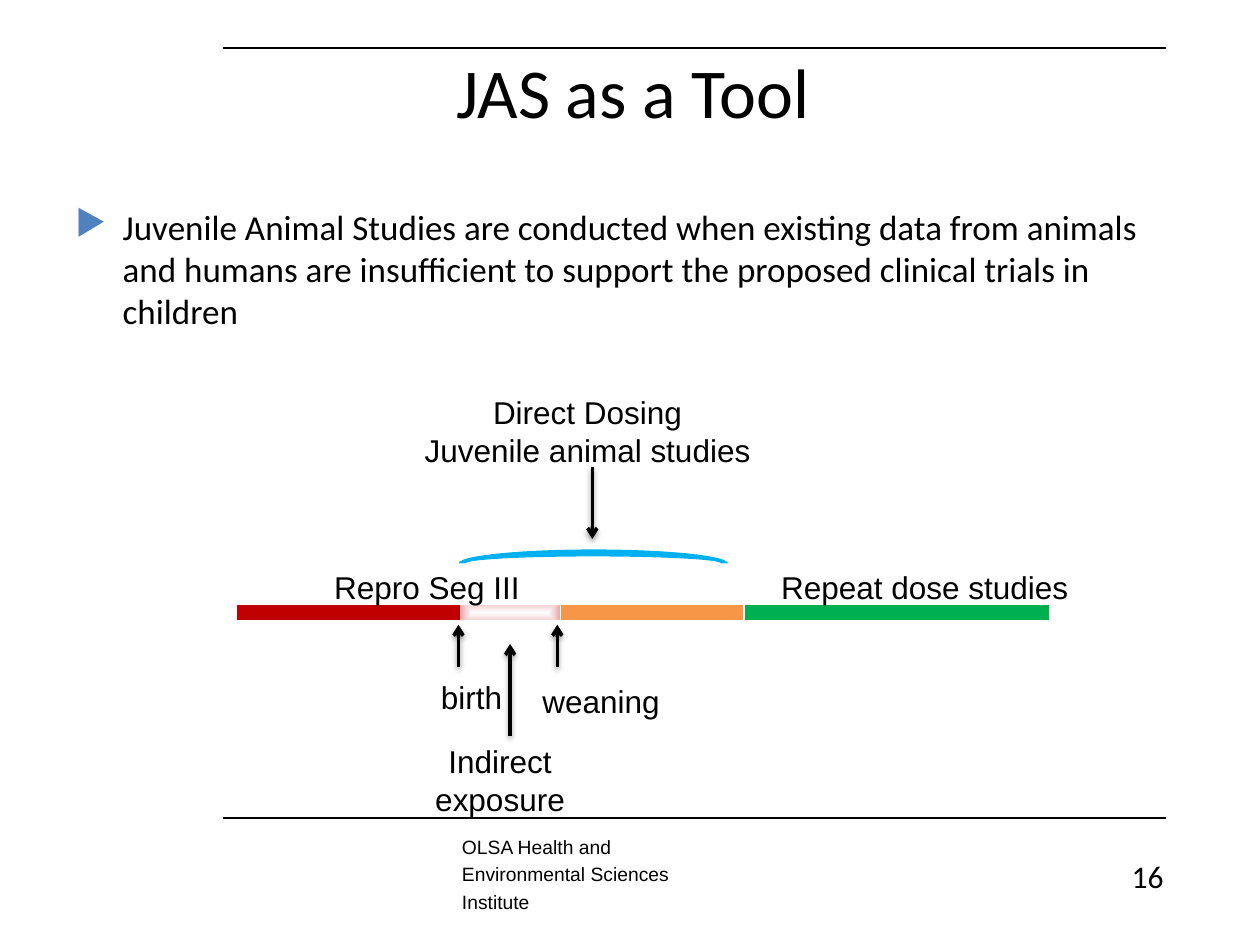
from pptx import Presentation
from pptx.dml.color import RGBColor
from pptx.enum.shapes import MSO_CONNECTOR, MSO_SHAPE
from pptx.enum.text import MSO_ANCHOR, PP_ALIGN
from pptx.oxml import parse_xml
from pptx.oxml.ns import nsdecls
from pptx.util import Pt

# Content
TITLE = "JAS as a Tool"
BODY = ("Juvenile Animal Studies are conducted when existing data from animals and humans "
        "are insufficient to support the proposed clinical trials in children")
FOOTER = "OLSA Health and Environmental Sciences Institute"
PAGE = "16"

# Timeline phases: visible left, visible right, colour name
PHASES = [
    (263.5, 319.5, "exposure"),
    (135.5, 263, "repro"),
    (320.5, 424.5, "juvenile"),
    (426, 599.5, "repeat"),
]
# Labels: paragraphs, (left, top, width, height), alignment
LABELS = [
    (["Repro Seg III"], (182, 321, 122, 29), "r"),
    (["birth"], (231, 384, 63, 29), "r"),
    (["weaning"], (291.5, 386, 92.5, 29), "r"),
    (["Indirect exposure"], (236, 420.5, 99.5, 51), "c"),
    (["Direct Dosing", "Juvenile animal studies"], (218, 221, 235.5, 51), "c"),
    (["Repeat dose studies"], (426, 321, 191.5, 29), "r"),
]
# Arrows: x, start y, tip y
ARROWS = [(318.5, 381, 357), (262, 381, 357), (291.5, 420.5, 368), (338.5, 267, 308)]
RULES_Y = [27.5, 467.5]

THEME = {
    "text": "000000", "paper": "FFFFFF", "bullet": "4F81BD", "arc": "00B0F0",
    "repro": "C00000", "juvenile": "F79646", "repeat": "00B050", "edge": "800080",
    "head": "Calibri", "label": "Arial",
    "title": 40, "body": 20, "note": 18, "footer": 11,
}
ALIGN = {"l": PP_ALIGN.LEFT, "c": PP_ALIGN.CENTER, "r": PP_ALIGN.RIGHT}
BAR_CENTRE, BAR_BOX_HEIGHT = 350, 34.5
MINUS_SPAN = 0.735  # share of a minus shape's width that is drawn


def color(name):
    return RGBColor.from_string(THEME[name])


def write(sp, lines, font="label", size="note", align="l", spacing=None, inset=None, bullet=None):
    tf = sp.text_frame
    tf.word_wrap = True
    tf.vertical_anchor = MSO_ANCHOR.TOP
    if inset is not None:
        tf.margin_left = tf.margin_right = tf.margin_top = tf.margin_bottom = Pt(inset)
    for i, line in enumerate(lines):
        p = tf.add_paragraph() if i else tf.paragraphs[0]
        p.alignment = ALIGN[align]
        if spacing:
            p.line_spacing = spacing
        if bullet:
            pPr = p._p.get_or_add_pPr()
            pPr.set("marL", str(Pt(27)))
            pPr.set("indent", str(-Pt(27)))
            pPr.append(parse_xml(f'<a:buClr {nsdecls("a")}><a:srgbClr val="{THEME["bullet"]}"/></a:buClr>'))
            pPr.append(parse_xml(f'<a:buChar {nsdecls("a")} char="{bullet}"/>'))
        r = p.add_run()
        r.text = line
        r.font.name, r.font.size = THEME[font], Pt(THEME[size])
        r.font.color.rgb = color("text")


def add_text(s, lines, box, **fmt):
    sp = s.shapes.add_textbox(*map(Pt, box))
    write(sp, lines, **fmt)
    return sp


def add_shape(s, kind, box, fill):
    sp = s.shapes.add_shape(kind, *map(Pt, box))
    sp.shadow.inherit = False
    sp.line.fill.background()
    sp.fill.solid()
    sp.fill.fore_color.rgb = color(fill)
    return sp


def add_line(s, x1, y1, x2, y2, width, arrow=False):
    c = s.shapes.add_connector(MSO_CONNECTOR.STRAIGHT, Pt(x1), Pt(y1), Pt(x2), Pt(y2))
    c.line.width = Pt(width)
    c.line.color.rgb = color("text")
    shadow = ""
    if arrow:
        c.line._get_or_add_ln().append(parse_xml(f'<a:tailEnd {nsdecls("a")} type="arrow"/>'))
        shadow = (f'<a:outerShdw blurRad="{Pt(3.1)}" dist="{Pt(1.6)}" dir="5400000" rotWithShape="0">'
                  f'<a:srgbClr val="{THEME["text"]}"><a:alpha val="38000"/></a:srgbClr></a:outerShdw>')
    c._element.spPr.append(parse_xml(f'<a:effectLst {nsdecls("a")}>{shadow}</a:effectLst>'))


def fade_from_centre(sp):
    stops = [(0, "paper", '<a:alpha val="60000"/>'), (93, "repro", ""), (100, "edge", "")]
    gs = "".join(f'<a:gs pos="{pos * 1000}"><a:srgbClr val="{THEME[name]}">{alpha}</a:srgbClr></a:gs>'
                 for pos, name, alpha in stops)
    spPr = sp._element.spPr
    solid = spPr.find("{http://schemas.openxmlformats.org/drawingml/2006/main}solidFill")
    spPr.replace(solid, parse_xml(
        f'<a:gradFill {nsdecls("a")}><a:gsLst>{gs}</a:gsLst><a:path path="shape">'
        '<a:fillToRect l="50000" t="50000" r="50000" b="50000"/></a:path></a:gradFill>'))


def main():
    prs = Presentation()
    prs.slide_width, prs.slide_height = Pt(720), Pt(540)
    s = prs.slides.add_slide(prs.slide_layouts[5])

    # Frame: rules, footer, page number
    for y in RULES_Y:
        add_line(s, 127.5, y, 666.5, y, 1)
    add_text(s, [FOOTER], (264, 474.5, 131, 48), size="footer", spacing=1.2, inset=0)
    add_text(s, [PAGE], (492, 486, 180, 29), font="head", align="r")

    # Title and body
    title = s.shapes.title
    title.left, title.top, title.width, title.height = map(Pt, (36, 24, 651.5, 85))
    write(title, [TITLE], font="head", size="title", align="c")
    body = add_text(s, [BODY], (36, 114, 651.5, 342), font="head", size="body", bullet="▶")
    body.fill.solid()
    body.fill.fore_color.rgb = color("paper")

    # Timeline
    for left, right, name in PHASES:
        width = (right - left) / MINUS_SPAN
        box = ((left + right - width) / 2, BAR_CENTRE - BAR_BOX_HEIGHT / 2, width, BAR_BOX_HEIGHT)
        fading = name == "exposure"
        bar = add_shape(s, MSO_SHAPE.MATH_MINUS, box, "paper" if fading else name)
        if fading:
            fade_from_centre(bar)

    # Arrows, labels and the dosing arc
    for x, start, tip in ARROWS:
        add_line(s, x, start, x, tip, 2, arrow=True)
    for lines, box, align in LABELS:
        add_text(s, lines, box, align=align)
    add_shape(s, MSO_SHAPE.BLOCK_ARC, (262, 314, 154, 16), "arc")

    prs.save("out.pptx")


if __name__ == "__main__":
    main()
